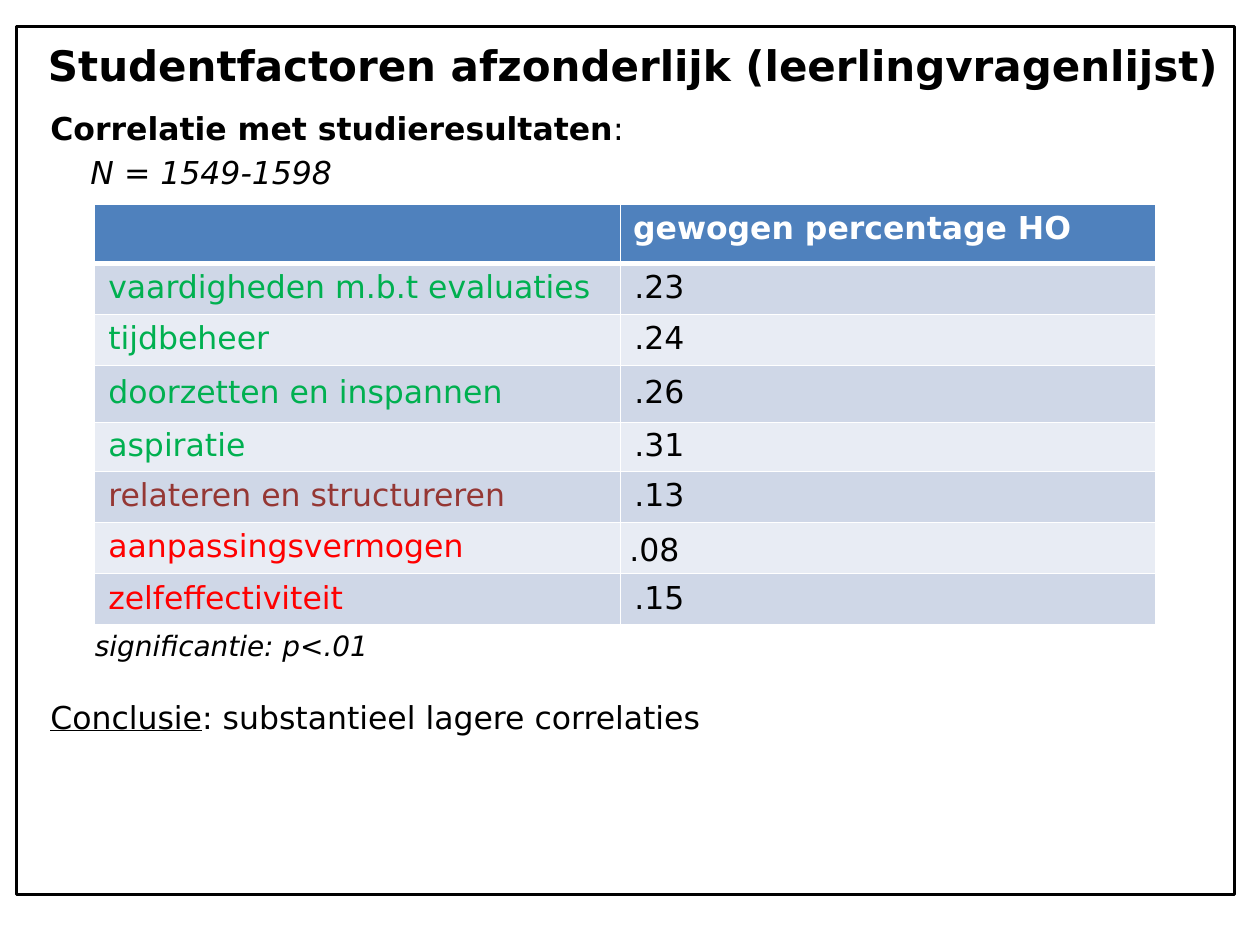
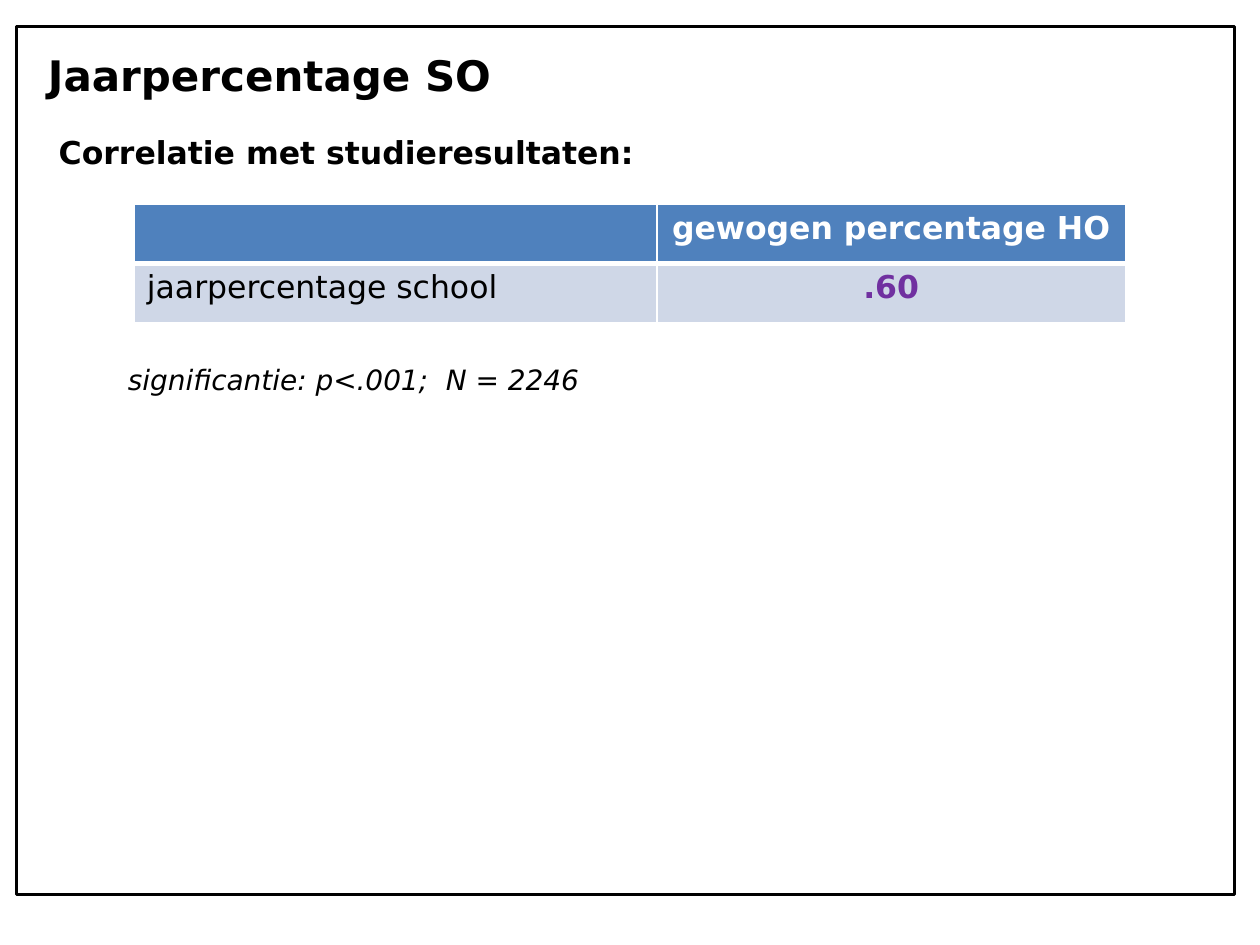
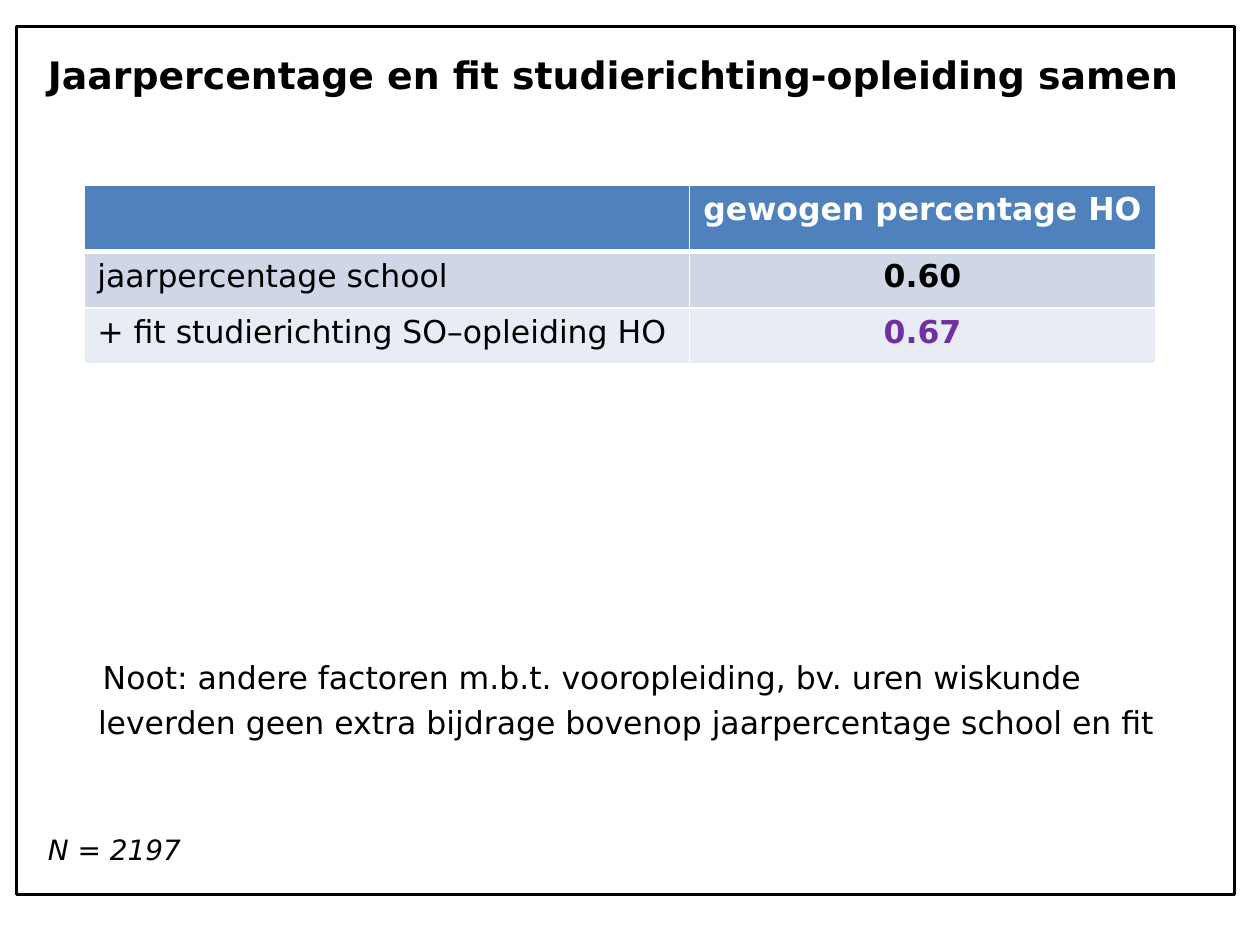
from pptx import Presentation
from pptx.dml.color import RGBColor
from pptx.enum.shapes import MSO_SHAPE
from pptx.enum.text import MSO_ANCHOR, MSO_AUTO_SIZE, PP_ALIGN
from pptx.oxml.ns import qn
from pptx.util import Pt
from lxml import etree

RECT = MSO_SHAPE.RECTANGLE
MIDDLE, TOP = MSO_ANCHOR.MIDDLE, MSO_ANCHOR.TOP
LEFT, CENTER = PP_ALIGN.LEFT, PP_ALIGN.CENTER
NO_FIT = MSO_AUTO_SIZE.NONE

FONT = "DejaVu Sans"
BLACK, WHITE = "000000", "FFFFFF"
GREEN, BROWN, RED, PURPLE = "00B050", "953734", "FF0000", "7030A0"
HEADER, BANDS = "4F81BD", ("CFD7E7", "E8ECF4")
RIGHT_EDGE = 702

# Cell styles: margins (left, top), anchor, alignment and line spacing
ROOMY = dict(margins=(7.2, 3.6), anchor=TOP)
TIGHT = dict(margins=(7.92, 0), anchor=MIDDLE, spacing=0.89)
LOOSE = dict(margins=(5.04, 0), anchor=MIDDLE, spacing=1.15)
CENTERED = dict(ROOMY, align=CENTER)
COLUMN_HEAD = "gewogen percentage HO"

# Content: a text is (left, top, paragraphs); a paragraph is a list of (text, format);
# a table row is a list of (text, text format, cell style)
FACTORS = [
    ("vaardigheden m.b.t evaluaties", GREEN, ".23", TIGHT),
    ("tijdbeheer", GREEN, ".24", TIGHT),
    ("doorzetten en inspannen", GREEN, ".26", TIGHT),
    ("aspiratie", GREEN, ".31", TIGHT),
    ("relateren en structureren", BROWN, ".13", TIGHT),
    ("aanpassingsvermogen", RED, ".08", LOOSE),
    ("zelfeffectiviteit", RED, ".15", TIGHT),
]
SMALL_ITALIC = dict(size=16, italic=True)
SLIDES = [
    dict(
        title="Studentfactoren afzonderlijk (leerlingvragenlijst)",
        title_box=(20.2, 15.1, 686.2, 43.2), title_size=24,
        texts=[
            (28.8, 62.3, [[("Correlatie met studieresultaten", dict(bold=True)), (":", {})]]),
            (51.7, 87.5, [[("N = 1549-1598", dict(italic=True))]]),
            (54.2, 358.9, [[("significantie: p<.01", SMALL_ITALIC)]]),
            (28.8, 398.7, [[("Conclusie", dict(underline=True)),
                            (": substantieel lagere correlaties", {})]]),
        ],
        table_at=(54, 116.8), cols=(300.6, 305.8),
        heights=(33.8, 29.2, 29.2, 32.4, 28.1, 29.2, 29.2, 29.2),
        head_style=ROOMY,
        rows=[[(name, dict(color=color), TIGHT), (value, {}, style)]
              for name, color, value, style in FACTORS],
    ),
    dict(
        title="Jaarpercentage SO",
        title_box=(20.2, 21, 680.4, 43.2), title_size=24,
        texts=[
            (33.6, 75.8, [[("Correlatie met studieresultaten:", dict(bold=True))]]),
            (73.1, 206.9, [[("significantie: p<.001;  N = 2246", SMALL_ITALIC)]]),
        ],
        table_at=(76.8, 116.8), cols=(298.6, 267.8), heights=(33.8, 33.8),
        head_style=CENTERED,
        rows=[[("jaarpercentage school", {}, ROOMY),
               (".60", dict(bold=True, color=PURPLE), CENTERED)]],
    ),
    dict(
        title="Jaarpercentage en fit studierichting-opleiding samen",
        title_box=(20.2, 21, 680.4, 43.2), title_size=21.6,
        texts=[
            (56, 375.9, [
                [("Noot: andere factoren m.b.t. vooropleiding, bv. uren wiskunde", {})],
                [("leverden geen extra bijdrage bovenop jaarpercentage school en fit", {})],
            ]),
            (27.4, 476, [[("N = 2197", SMALL_ITALIC)]]),
        ],
        table_at=(48.4, 105.6), cols=(345.6, 266.4), heights=(38.2, 32.3, 31.7),
        head_style=CENTERED,
        rows=[[("jaarpercentage school", {}, ROOMY),
               ("0.60", dict(bold=True), CENTERED)],
              [("+ fit studierichting SO–opleiding HO", {}, ROOMY),
               ("0.67", dict(bold=True, color=PURPLE), CENTERED)]],
    ),
]


def rgb(value):
    return RGBColor.from_string(value)


def add_run(p, text, size=18, color=BLACK, bold=False, italic=False, underline=False):
    r = p.add_run()
    r.text = text
    font = r.font
    font.name, font.size = FONT, Pt(size)
    font.bold, font.italic, font.underline = bold, italic, underline
    font.color.rgb = rgb(color)


def add_frame(s):
    sp = s.shapes.add_shape(RECT, Pt(9.4), Pt(15.1), Pt(696.2), Pt(496.1))
    sp.shadow.inherit = False
    sp.fill.background()
    sp.line.color.rgb = rgb(BLACK)
    sp.line.width = Pt(1.75)


def set_title(s, text, box, size):
    sp = s.shapes.title
    sp.left, sp.top, sp.width, sp.height = map(Pt, box)
    tf = sp.text_frame
    tf.auto_size, tf.vertical_anchor = NO_FIT, MIDDLE
    p = tf.paragraphs[0]
    p.alignment = LEFT
    add_run(p, text, size=size, bold=True)


def add_text(s, left, top, paragraphs):
    height = 25.2 * len(paragraphs)
    sp = s.shapes.add_textbox(Pt(left), Pt(top), Pt(RIGHT_EDGE - left), Pt(height))
    tf = sp.text_frame
    tf.word_wrap = True
    tf.margin_left = tf.margin_right = tf.margin_top = tf.margin_bottom = 0
    for i, runs in enumerate(paragraphs):
        p = tf.add_paragraph() if i else tf.paragraphs[0]
        if i:
            p.space_before = Pt(4.2)
        for text, style in runs:
            add_run(p, text, **style)
    if len(paragraphs) > 1:  # the first line of a note is set in a little
        tf.paragraphs[0]._p.get_or_add_pPr().set("indent", str(Pt(2.7)))


def set_borders(cell, top, bottom):
    tcPr = cell._tc.get_or_add_tcPr()
    for side, width in (("L", 1), ("R", 1), ("T", top), ("B", bottom)):
        ln = etree.SubElement(tcPr, qn("a:ln" + side), w=str(Pt(width)))
        fill = etree.SubElement(ln, qn("a:solidFill"))
        etree.SubElement(fill, qn("a:srgbClr"), val=WHITE)


def fill_cell(cell, text, style, margins, anchor, align=LEFT, spacing=None):
    cell.margin_left = cell.margin_right = Pt(margins[0])
    cell.margin_top = cell.margin_bottom = Pt(margins[1])
    cell.vertical_anchor = anchor
    p = cell.text_frame.paragraphs[0]
    p.alignment = align
    if spacing:
        p.line_spacing = spacing
    if text:
        add_run(p, text, **style)


def add_table(s, at, cols, heights, head_style, rows):
    white_bold = dict(color=WHITE, bold=True)
    rows = [[("", {}, ROOMY), (COLUMN_HEAD, white_bold, head_style)]] + rows
    table = s.shapes.add_table(len(rows), len(cols), Pt(at[0]), Pt(at[1]),
                               Pt(sum(cols)), Pt(sum(heights))).table
    table.horz_banding = False
    for column, width in zip(table.columns, cols):
        column.width = Pt(width)
    for i, (row, height) in enumerate(zip(rows, heights)):
        table.rows[i].height = Pt(height)
        for j, (text, style, layout) in enumerate(row):
            cell = table.cell(i, j)
            fill_cell(cell, text, style, **layout)
            # A thick rule parts the header from the body
            set_borders(cell, top=3 if i == 1 else 1, bottom=3 if i == 0 else 1)
            cell.fill.solid()
            cell.fill.fore_color.rgb = rgb(BANDS[(i - 1) % 2] if i else HEADER)


def main():
    prs = Presentation()
    prs.slide_width, prs.slide_height = Pt(720), Pt(540)
    for content in SLIDES:
        s = prs.slides.add_slide(prs.slide_layouts[5])
        add_frame(s)
        set_title(s, content["title"], content["title_box"], content["title_size"])
        for text in content["texts"]:
            add_text(s, *text)
        add_table(s, content["table_at"], content["cols"], content["heights"],
                  content["head_style"], content["rows"])
    prs.save("out.pptx")


if __name__ == "__main__":
    main()
